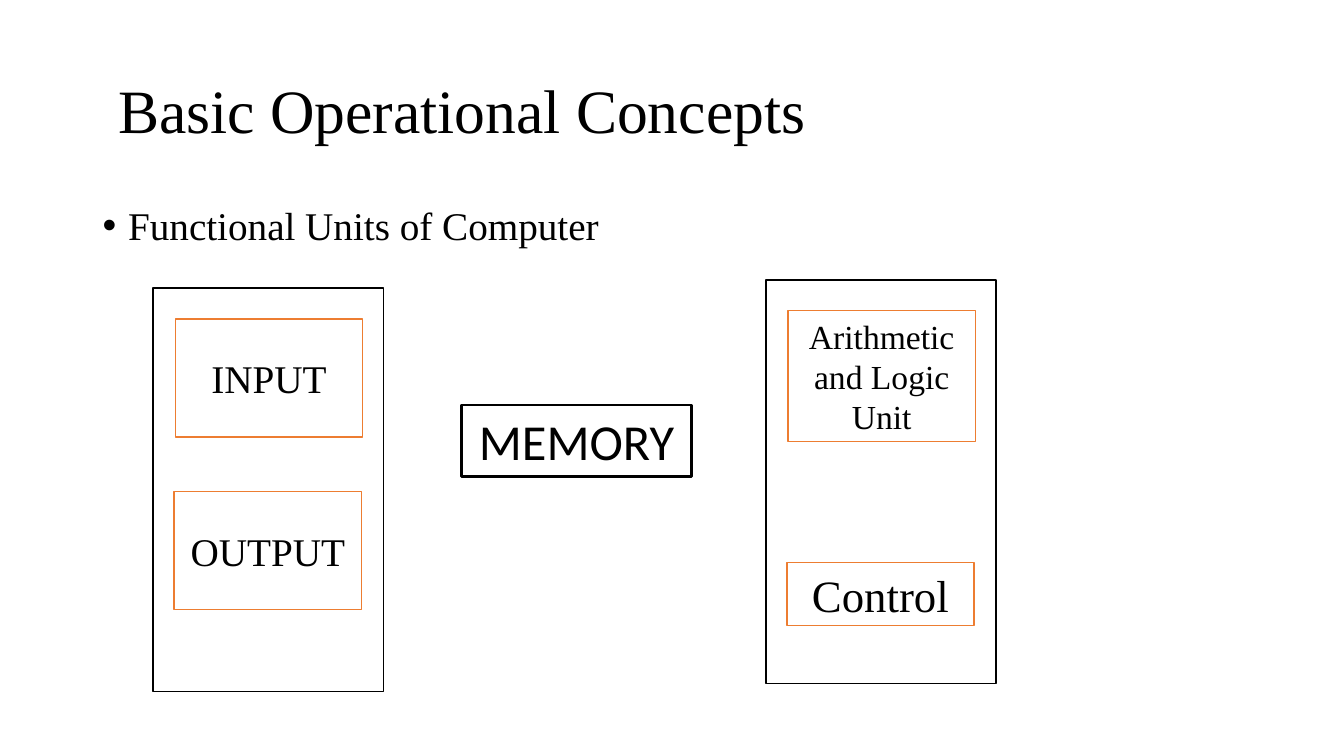
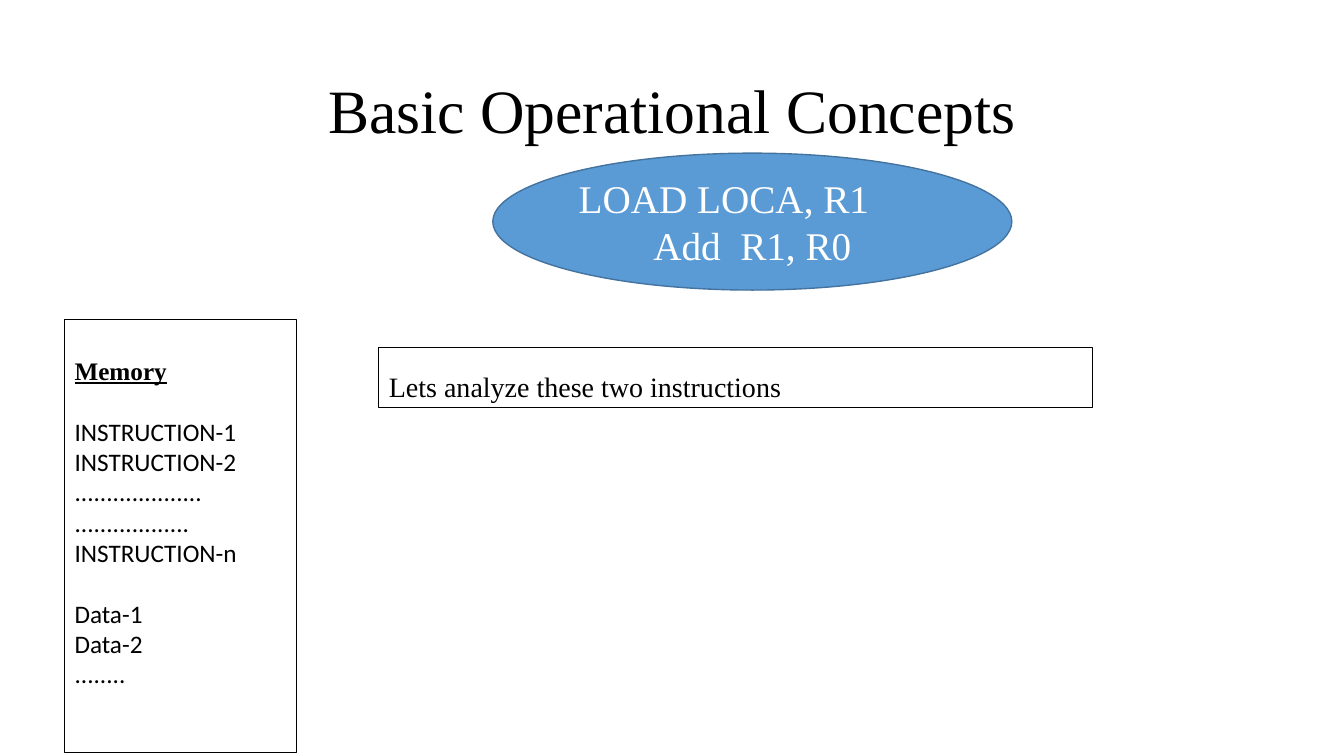
from dataclasses import dataclass

from lxml.etree import SubElement
from pptx import Presentation
from pptx.dml.color import RGBColor
from pptx.enum.shapes import MSO_SHAPE as Preset
from pptx.enum.text import MSO_ANCHOR as Anchor, PP_ALIGN as Align
from pptx.oxml.ns import qn
from pptx.util import Cm, Pt


@dataclass(frozen=True)
class Theme:
    black: str = "000000"
    white: str = "FFFFFF"
    orange: str = "ED7D31"
    blue: str = "5B9BD5"
    dark_blue: str = "43739E"
    serif: str = "Times New Roman"
    sans: str = "Calibri"
    title: int = 44
    body: int = 28
    note: int = 20
    listing: int = 18
    blank_line: int = 22


theme = Theme()


def add_box(slide, left, top, width, height, preset=Preset.RECTANGLE,
            fill=theme.white, line=theme.black, weight=1, anchor=Anchor.TOP):
    """Add a preset shape, or a plain text box when preset is None."""
    place = [Cm(length) for length in (left, top, width, height)]
    if preset is None:
        shape = slide.shapes.add_textbox(*place)
    else:
        shape = slide.shapes.add_shape(preset, *place)
        shape.shadow.inherit = False
        shape.line.color.rgb = RGBColor.from_string(line)
        shape.line.width = Pt(weight)
        if fill:
            shape.fill.solid()
            shape.fill.fore_color.rgb = RGBColor.from_string(fill)
        else:
            shape.fill.background()
    shape.text_frame.word_wrap = True
    shape.text_frame.vertical_anchor = anchor
    return shape


def write(shape, text, size=theme.body, font=theme.serif, color=theme.black,
          align=Align.LEFT, spacing=1.0, before=0, bold=False, underline=False):
    """Write one more paragraph into a shape."""
    frame = shape.text_frame
    paragraph = frame.add_paragraph() if frame.text else frame.paragraphs[0]
    paragraph.alignment = align
    paragraph.line_spacing = spacing
    paragraph.space_before = Pt(before)
    run = paragraph.add_run()
    run.text = text
    run.font.size = Pt(size)
    run.font.name = font
    run.font.bold = bold
    run.font.underline = underline
    run.font.color.rgb = RGBColor.from_string(color)
    return paragraph


presentation = Presentation()
presentation.slide_width, presentation.slide_height = Cm(33.87), Cm(19.05)

# Slides with their shared title
slides = []
for align, inset in ((Align.LEFT, 0.64), (Align.CENTER, 0.25)):
    slide = presentation.slides.add_slide(presentation.slide_layouts[6])
    title = add_box(slide, 2.34, 1.02, 29.21, 3.68, preset=None, anchor=Anchor.MIDDLE)
    title.text_frame.margin_left = Cm(inset)
    write(title, "Basic Operational Concepts", size=theme.title, align=align, spacing=0.9)
    slides.append(slide)
units_slide, program_slide = slides

# Slide 1: bullet
body = add_box(units_slide, 2.34, 5.08, 29.21, 1.4, preset=None)
bullet = write(body, "Functional Units of Computer", spacing=0.9)
properties = bullet._p.get_or_add_pPr()
properties.set("marL", str(Cm(0.64)))
properties.set("indent", str(-Cm(0.64)))
SubElement(properties, qn("a:buFont")).set("typeface", "Arial")
SubElement(properties, qn("a:buChar")).set("char", "•")

# Slide 1: panels, each with units as text, size, offset x, offset y, height, top inset
panels = (
    (3.86, 7.26, (("INPUT", 28, 0.56, 0.78, 2.97, 0.9),
                  ("OUTPUT", 28, 0.53, 5.13, 2.97, 0.9))),
    (19.3, 7.06, (("Arithmetic and Logic Unit", 24, 0.56, 0.76, 3.3, 0.13),
                  ("Control", 32, 0.53, 7.11, 1.6, 0.13))),
)
for left, top, units in panels:
    add_box(units_slide, left, top, 5.8, 10.16)
    for text, size, offset_x, offset_y, height, inset in units:
        unit = add_box(units_slide, left + offset_x, top + offset_y, 4.72, height,
                       line=theme.orange)
        unit.text_frame.margin_top = Cm(inset)
        write(unit, text, size=size, align=Align.CENTER)

# Slide 1: memory unit between the panels
memory_unit = add_box(units_slide, 11.63, 10.21, 5.8, 1.8, weight=1.75)
write(memory_unit, "MEMORY", size=36, font=theme.sans, align=Align.CENTER)

# Slide 2: note
note = add_box(program_slide, 9.55, 8.76, 17.98, 1.52, fill=None, weight=0.75)
write(note, "Lets analyze these two instructions", size=theme.note, spacing=1.5)

# Slide 2: memory contents, in groups one line apart
memory = add_box(program_slide, 1.63, 8.05, 5.84, 10.92)
memory.text_frame.margin_top = Cm(0.9)
write(memory, "Memory", size=theme.listing, bold=True, underline=True)
groups = (
    ("INSTRUCTION-1", "INSTRUCTION-2", "." * 20, "." * 18, "INSTRUCTION-n"),
    ("Data-1", "Data-2", "." * 8),
)
for group in groups:
    for index, entry in enumerate(group):
        write(memory, entry, size=theme.listing, font=theme.sans,
              before=0 if index else theme.blank_line)

# Slide 2: the two instructions
instructions = add_box(program_slide, 12.42, 3.86, 13.08, 3.45, preset=Preset.OVAL,
                       fill=theme.blue, line=theme.dark_blue, anchor=Anchor.MIDDLE)
write(instructions, "LOAD LOCA, R1", color=theme.white)
write(instructions, "Add  R1, R0", color=theme.white, align=Align.CENTER)

presentation.save("out.pptx")
